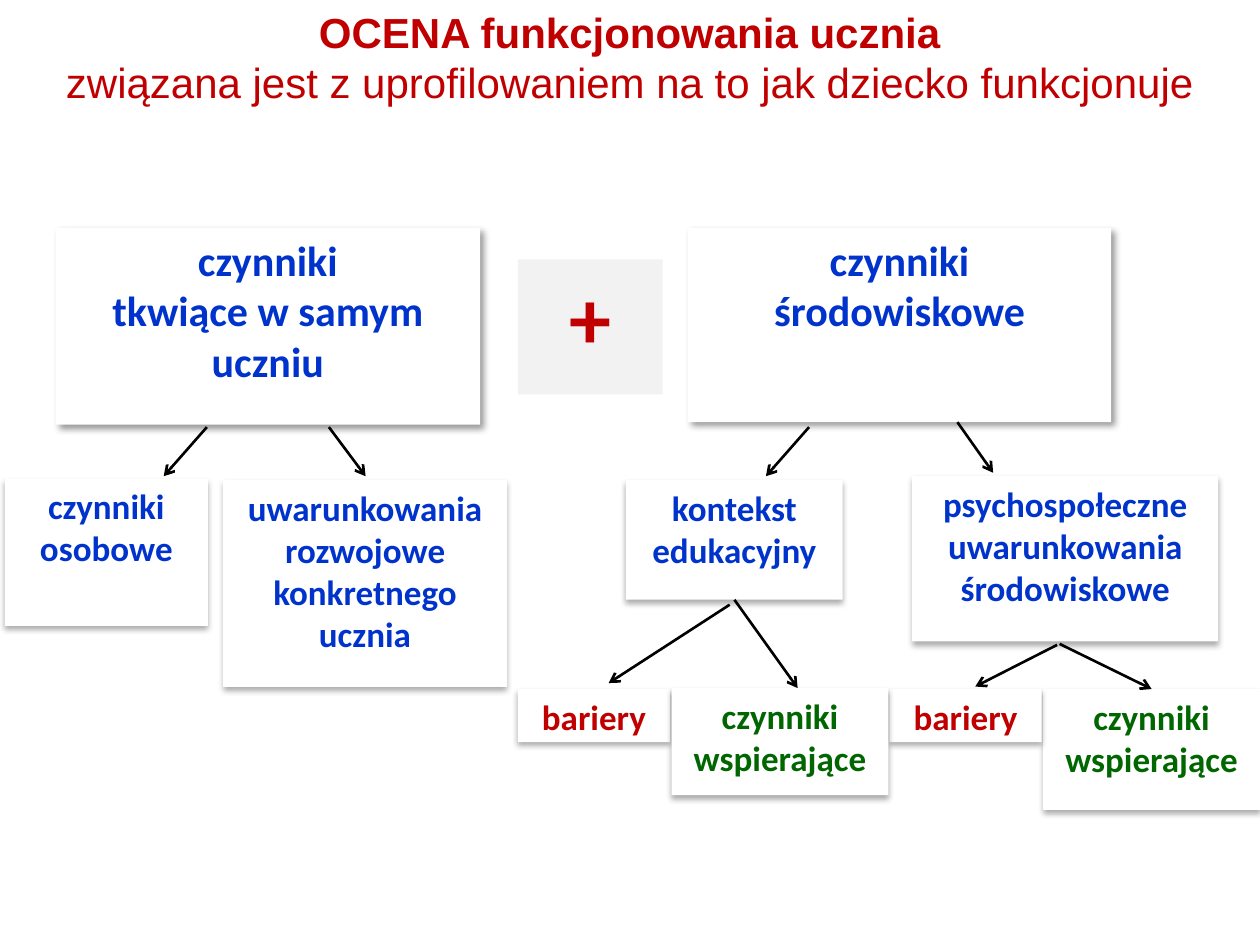
from dataclasses import dataclass
from typing import Optional

from lxml import etree
from pptx import Presentation
from pptx import util as u
from pptx.dml.color import RGBColor
from pptx.enum import shapes, text
from pptx.oxml import ns


@dataclass(frozen=True)
class Shadow:
    alpha: int      # percent
    blur: float     # points
    distance: float  # points
    angle: int      # degrees


@dataclass(frozen=True)
class Theme:
    red: str = "C00000"
    blue: str = "0033CC"
    green: str = "006600"
    black: str = "000000"
    white: str = "FFFFFF"
    grey: str = "F2F2F2"
    title_font: str = "Arial"
    body_font: str = "Calibri"
    large: int = 24
    medium: int = 20
    plus: int = 48
    line: float = 1.5
    deep: Shadow = Shadow(40, 4, 3, 45)
    soft: Shadow = Shadow(32, 3.5, 2.2, 90)


THEME = Theme()


@dataclass(frozen=True)
class Box:
    lines: tuple[str, ...]
    left: float
    top: float
    width: float
    height: float
    color: str = THEME.blue
    size: int = THEME.medium
    fill: str = THEME.white
    shadow: Optional[Shadow] = THEME.soft


@dataclass(frozen=True)
class Arrow:
    start: tuple[float, float]
    end: tuple[float, float]
    source: Optional[str] = None  # box whose bottom the arrow leaves
    target: Optional[str] = None  # box whose top the arrow reaches


BARRIER = ("bariery",)
SUPPORT = ("czynniki wspierające",)

BOXES = {
    "pupil": Box(("czynniki", "tkwiące w samym uczniu"), 1.12, 4.6, 8.56, 3.96,
                 size=THEME.large, shadow=THEME.deep),
    "environment": Box(("czynniki", "środowiskowe"), 13.87, 4.6, 8.53, 3.91,
                       size=THEME.large, shadow=THEME.deep),
    "personal": Box(("czynniki", "osobowe"), 0.1, 9.65, 4.09, 2.97),
    "development": Box(("uwarunkowania rozwojowe konkretnego ucznia",),
                       4.5, 9.68, 5.72, 4.17),
    "education": Box(("kontekst edukacyjny",), 12.62, 9.68, 4.37, 2.41),
    "psychosocial": Box(("psychospołeczne uwarunkowania środowiskowe",),
                        18.39, 9.6, 6.17, 3.33),
    "education barriers": Box(BARRIER, 10.44, 13.89, 3.07, 1.07, THEME.red),
    "psychosocial support": Box(SUPPORT, 21.03, 13.89, 4.37, 2.44, THEME.green),
    "psychosocial barriers": Box(BARRIER, 17.93, 13.89, 3.07, 1.07, THEME.red),
    "education support": Box(SUPPORT, 13.54, 13.87, 4.37, 2.16, THEME.green),
    "plus": Box(("+",), 10.44, 5.23, 2.92, 2.72, THEME.red, THEME.plus,
                THEME.grey, None),
}

ARROWS = (
    Arrow((4.17, 8.61), (3.3, 9.6)),
    Arrow((6.63, 8.61), (7.37, 9.6)),
    Arrow((16.31, 8.61), (15.44, 9.6)),
    Arrow((19.3, 8.51), (20.02, 9.53)),
    Arrow((14.71, 12.19), (12.27, 13.77)),
    Arrow((14.78, 12.17), (16.08, 13.87), source="education"),
    Arrow((21.31, 13), (19.66, 13.84)),
    Arrow((21.36, 12.98), (23.21, 13.89), target="psychosocial support"),
)


def write_line(frame, index: int, words: str, font: str, size: int,
               color: str, bold: bool) -> None:
    paragraph = frame.paragraphs[0] if index == 0 else frame.add_paragraph()
    paragraph.alignment = text.PP_ALIGN.CENTER
    run = paragraph.add_run()
    run.text = words
    for name, value in {"name": font, "size": u.Pt(size), "bold": bold}.items():
        setattr(run.font, name, value)
    run.font.color.rgb = RGBColor.from_string(color)


def add_title(slide) -> None:
    title = slide.shapes.add_textbox(u.Cm(0.3), u.Cm(0), u.Cm(24.79), u.Cm(2.31))
    title.text_frame.word_wrap = True
    lines = (("OCENA funkcjonowania ucznia", True),
             ("związana jest z uprofilowaniem na to jak dziecko funkcjonuje", False))
    for index, (words, bold) in enumerate(lines):
        write_line(title.text_frame, index, words, THEME.title_font,
                   THEME.large, THEME.red, bold)


def cast_shadow(shape, shadow: Shadow) -> None:
    effects = shape._element.spPr.find(ns.qn("a:effectLst"))
    outer = etree.SubElement(
        effects, ns.qn("a:outerShdw"), blurRad=str(u.Pt(shadow.blur)),
        dist=str(u.Pt(shadow.distance)), dir=str(shadow.angle * 60000),
        algn="tl", rotWithShape="0")
    color = etree.SubElement(outer, ns.qn("a:srgbClr"), val=THEME.black)
    etree.SubElement(color, ns.qn("a:alpha"), val=str(shadow.alpha * 1000))


def add_box(slide, box: Box):
    place = (u.Cm(n) for n in (box.left, box.top, box.width, box.height))
    shape = slide.shapes.add_shape(shapes.MSO_SHAPE.RECTANGLE, *place)
    shape.shadow.inherit = False
    shape.fill.solid()
    shape.fill.fore_color.rgb = RGBColor.from_string(box.fill)
    shape.line.fill.background()
    if box.shadow:
        cast_shadow(shape, box.shadow)
    frame = shape.text_frame
    layout = {"word_wrap": True, "vertical_anchor": text.MSO_ANCHOR.TOP}
    for name, value in layout.items():
        setattr(frame, name, value)
    for index, words in enumerate(box.lines):
        write_line(frame, index, words, THEME.body_font, box.size, box.color, True)
    return shape


def add_arrow(slide, arrow: Arrow, drawn: dict) -> None:
    ends = (u.Cm(n) for n in arrow.start + arrow.end)
    connector = slide.shapes.add_connector(shapes.MSO_CONNECTOR.STRAIGHT, *ends)
    if arrow.source:
        connector.begin_connect(drawn[arrow.source], 2)
    if arrow.target:
        connector.end_connect(drawn[arrow.target], 0)
    connector.line.width = u.Pt(THEME.line)
    connector.line.color.rgb = RGBColor.from_string(THEME.black)
    properties = connector._element.spPr
    etree.SubElement(properties.find(ns.qn("a:ln")), ns.qn("a:tailEnd"), type="arrow")
    etree.SubElement(properties, ns.qn("a:effectLst"))


def main() -> None:
    deck = Presentation()
    deck.slide_width, deck.slide_height = u.Cm(25.4), u.Cm(19.05)
    slide = deck.slides.add_slide(deck.slide_layouts[6])
    add_title(slide)
    drawn = {key: add_box(slide, box) for key, box in BOXES.items()}
    for arrow in ARROWS:
        add_arrow(slide, arrow, drawn)
    deck.save("out.pptx")


if __name__ == "__main__":
    main()
